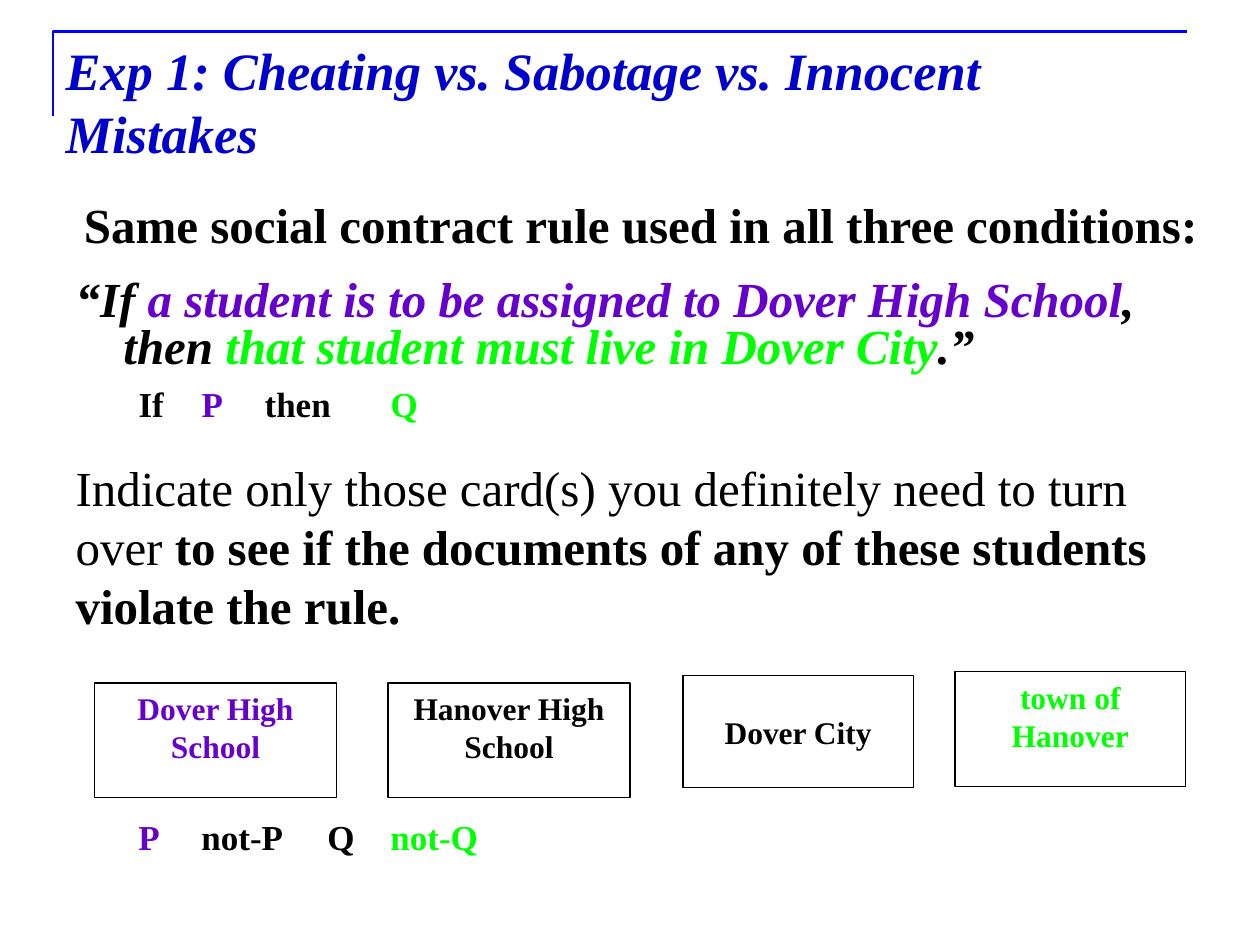
from lxml.etree import SubElement
from pptx import Presentation
from pptx.dml.color import RGBColor
from pptx.enum.shapes import MSO_SHAPE
from pptx.enum.text import MSO_ANCHOR, MSO_AUTO_SIZE, PP_ALIGN
from pptx.oxml.ns import qn
from pptx.util import Inches, Pt

FONT = "Times New Roman"
COLORS = {"black": "000000", "title": "0000CC", "rule": "0000FF",
          "p": "6600CC", "q": "00FF00"}

TITLE = [("Exp 1: Cheating vs. Sabotage vs. Innocent Mistakes", "title", "bi")]
BODY = [
    dict(runs=[("Same social contract rule used in all three conditions:", "black", "b")],
         size=28, align=PP_ALIGN.CENTER, spacing=0.8),
    dict(runs=[("“If ", "black", "bi"),
               ("a student is to be assigned to Dover High School", "p", "bi"),
               (", then ", "black", "bi"),
               ("that student must live in Dover City", "q", "bi"),
               (".”", "black", "bi")],
         size=28, hang=0.38, spacing=0.8, before=15.5),
    dict(runs=[("\tIf", "black", "b"), ("\tP", "p", "b"),
               ("\tthen", "black", "b"), ("\tQ", "q", "b")],
         size=20, tabs=[0.14, 2.29, 4.06, 6.05], before=5),
    dict(runs=[("Indicate only those card(s) you definitely need to turn over ", "black", ""),
               ("to see if the documents of any of these students violate the rule.",
                "black", "b")],
         size=28, before=19),
]
CARDS = [
    ("Dover High School", "p", (0.75, 5.42, 1.92, 0.91), MSO_ANCHOR.TOP),
    ("Hanover High School", "black", (3.08, 5.42, 1.92, 0.91), MSO_ANCHOR.TOP),
    ("Dover City", "black", (5.42, 5.36, 1.83, 0.89), MSO_ANCHOR.MIDDLE),
    ("town of Hanover", "q", (7.58, 5.33, 1.83, 0.91), MSO_ANCHOR.TOP),
]
CARD_LABELS = [("\tP", "p", "b"), ("\tnot-P", "black", "b"),
               ("\tQ", "black", "b"), ("\tnot-Q", "q", "b")]
LABEL_TABS = [1.06, 3.4, 5.76, 7.96]


def color(name):
    return RGBColor.from_string(COLORS[name])


def place(shape, box):
    shape.left, shape.top, shape.width, shape.height = map(Inches, box)


def set_frame(frame, anchor=MSO_ANCHOR.TOP):
    frame.word_wrap = True
    frame.auto_size = MSO_AUTO_SIZE.NONE
    frame.vertical_anchor = anchor


def write(paragraph, runs, size, align=PP_ALIGN.LEFT, spacing=1.0, before=0,
          hang=0, tabs=(), tab_align="l"):
    paragraph.alignment = align
    paragraph.line_spacing = spacing
    paragraph.space_before = Pt(before)
    properties = paragraph._p.get_or_add_pPr()
    properties.set("marL", str(Inches(hang)))
    properties.set("indent", str(-Inches(hang)))
    SubElement(properties, qn("a:buNone"))
    if tabs:
        stops = SubElement(properties, qn("a:tabLst"))
        for position in tabs:
            SubElement(stops, qn("a:tab"), pos=str(Inches(position)), algn=tab_align)
    for text, tone, style in runs:
        run = paragraph.add_run()
        run.text = text
        font = run.font
        font.name, font.size = FONT, Pt(size)
        font.bold, font.italic = "b" in style, "i" in style
        font.color.rgb = color(tone)


def main():
    deck = Presentation()
    deck.slide_width, deck.slide_height = Inches(10), Inches(7.5)
    slide = deck.slides.add_slide(deck.slide_layouts[1])
    shapes = slide.shapes

    title, body = shapes.title, slide.placeholders[1]
    place(title, (0.42, 0.25, 9, 1.11))
    set_frame(title.text_frame)
    write(title.text_frame.paragraphs[0], TITLE, 30)

    place(body, (0.5, 1.58, 9.17, 3.75))
    set_frame(body.text_frame)
    for index, content in enumerate(BODY):
        frame = body.text_frame
        write(frame.add_paragraph() if index else frame.paragraphs[0], **content)

    corner = shapes.build_freeform(Inches(0.42), Inches(0.92))
    corner.add_line_segments([(Inches(0.42), Inches(0.25)),
                              (Inches(9.42), Inches(0.25))], close=False)
    title_rule = corner.convert_to_shape()
    title_rule.shadow.inherit = False
    title_rule.fill.background()
    title_rule.line.color.rgb = color("rule")
    title_rule.line.width = Pt(1.5)

    for text, tone, box, anchor in CARDS:
        card = shapes.add_shape(MSO_SHAPE.RECTANGLE, *map(Inches, box))
        card.shadow.inherit = False
        card.fill.background()
        card.line.color.rgb = color("black")
        card.line.width = Pt(0.75)
        set_frame(card.text_frame, anchor)
        write(card.text_frame.paragraphs[0], [(text, tone, "b")], 18, PP_ALIGN.CENTER)

    labels = shapes.add_textbox(*map(Inches, (0.5, 6.42, 8.92, 0.43)))
    set_frame(labels.text_frame)
    write(labels.text_frame.paragraphs[0], CARD_LABELS, 20,
          tabs=LABEL_TABS, tab_align="ctr")

    deck.save("out.pptx")


if __name__ == "__main__":
    main()
